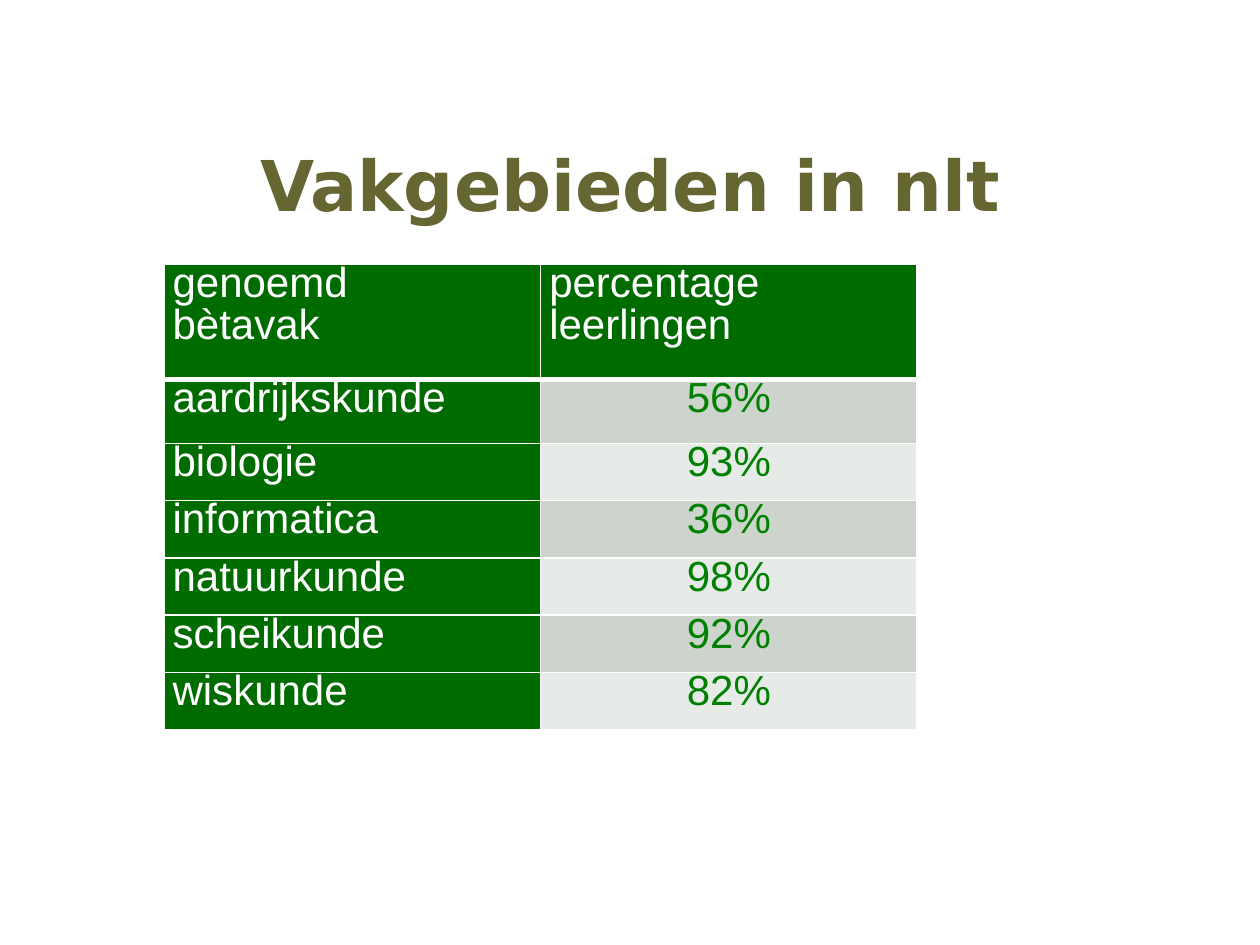
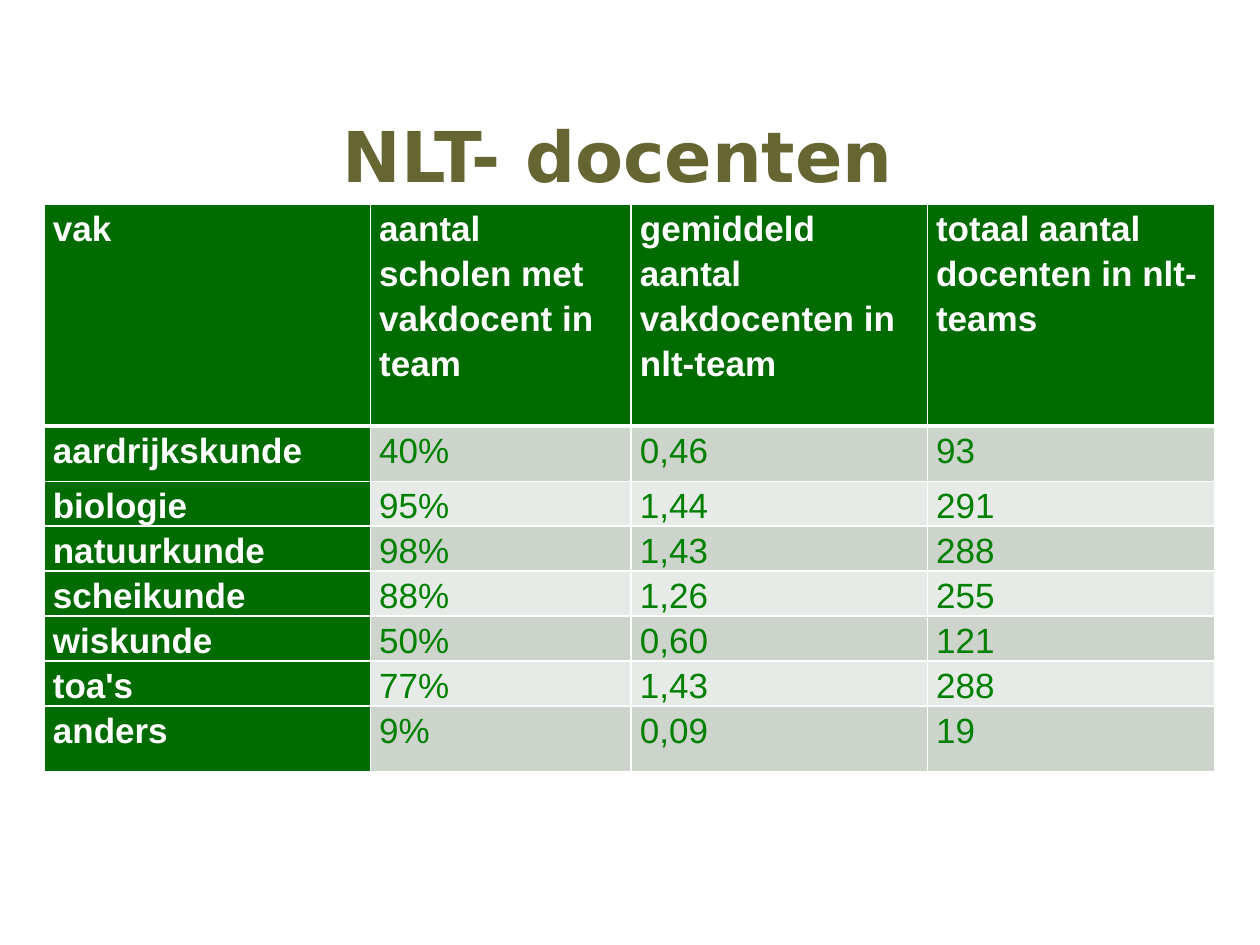
from lxml.etree import SubElement
from pptx import Presentation
from pptx.dml.color import RGBColor
from pptx.enum.text import MSO_ANCHOR as Anchor, PP_ALIGN as Align
from pptx.oxml.ns import qn
from pptx.util import Inches, Pt

COLUMNS, ROWS = 100, 75
WHITE, OLIVE, DARK_GREEN, GREEN = "FFFFFF", "666633", "006C00", "008000"
BANDS = ("CCD4CC", "E7EBE7")


def color(value):
    return RGBColor.from_string(value)


class Deck:
    def __init__(self):
        self.presentation = Presentation()
        self.presentation.slide_width = Inches(10)
        self.presentation.slide_height = Inches(7.5)
        self.slide = None

    def x(self, columns):
        return round(self.presentation.slide_width * columns / COLUMNS)

    def y(self, rows):
        return round(self.presentation.slide_height * rows / ROWS)

    def style(self, paragraph, font_name, size, font_color, bold, align):
        paragraph.alignment = align
        font = paragraph.font
        font.name, font.size, font.bold = font_name, Pt(size), bold
        font.color.rgb = color(font_color)

    def add_slide(self, title, top):
        layout = self.presentation.slide_layouts[5]
        self.slide = self.presentation.slides.add_slide(layout)
        shape = self.slide.shapes.title
        shape.left, shape.top = 0, self.y(top)
        shape.width, shape.height = self.x(COLUMNS), self.y(12.5)
        frame = shape.text_frame
        frame.text = title
        frame.vertical_anchor = Anchor.MIDDLE
        self.style(frame.paragraphs[0], "DejaVu Sans", 40, OLIVE, True, Align.CENTER)

    def add_borders(self, cell, header, below_header):
        properties = cell._tc.get_or_add_tcPr()
        widths = {"L": 1, "R": 1, "T": 3 if below_header else 1, "B": 3 if header else 1}
        for side, width in widths.items():
            line = SubElement(properties, qn(f"a:ln{side}"), w=str(Pt(width)))
            fill = SubElement(line, qn("a:solidFill"))
            SubElement(fill, qn("a:srgbClr"), val=WHITE)

    def fill_cell(self, cell, text, row, column, size, spacing, bold_labels, value_align):
        label = row == 0 or column == 0
        self.add_borders(cell, row == 0, row == 1)
        cell.fill.solid()
        cell.fill.fore_color.rgb = color(DARK_GREEN if label else BANDS[(row - 1) % 2])
        cell.margin_left = cell.margin_right = self.x(0.7)
        cell.margin_top = cell.margin_bottom = 0
        cell.text = text
        for paragraph in cell.text_frame.paragraphs:
            paragraph.line_spacing = spacing
            self.style(paragraph, "Arial", size, WHITE if label else GREEN,
                       label and bold_labels, Align.LEFT if label else value_align)

    def add_table(self, left, top, widths, heights, records, **text_style):
        shape = self.slide.shapes.add_table(
            len(heights), len(widths), self.x(left), self.y(top),
            self.x(sum(widths)), self.y(sum(heights)))
        table = shape.table
        for column, width in zip(table.columns, widths):
            column.width = self.x(width)
        for row, height in zip(table.rows, heights):
            row.height = self.y(height)
        for row, record in enumerate(records):
            for column, text in enumerate(record):
                self.fill_cell(table.cell(row, column), text, row, column, **text_style)


SUBJECT_SHARES = [
    ("genoemd\nbètavak", "percentage\nleerlingen"),
    ("aardrijkskunde", "56%"),
    ("biologie", "93%"),
    ("informatica", "36%"),
    ("natuurkunde", "98%"),
    ("scheikunde", "92%"),
    ("wiskunde", "82%"),
]

TEACHERS = [
    ("vak", "aantal scholen met vakdocent in team",
     "gemiddeld aantal vakdocenten in nlt-team", "totaal aantal docenten in nlt-teams"),
    ("aardrijkskunde", "40%", "0,46", "93"),
    ("biologie", "95%", "1,44", "291"),
    ("natuurkunde", "98%", "1,43", "288"),
    ("scheikunde", "88%", "1,26", "255"),
    ("wiskunde", "50%", "0,60", "121"),
    ("toa's", "77%", "1,43", "288"),
    ("anders", "9%", "0,09", "19"),
]


def main():
    deck = Deck()
    deck.add_slide("Vakgebieden in nlt", 8.3)
    deck.add_table(13, 21, [29.9] * 2, [9.1, 5.1] + [4.54] * 5, SUBJECT_SHARES,
                   size=24, spacing=Pt(24), bold_labels=False, value_align=Align.CENTER)
    deck.add_slide("NLT- docenten ", 6)
    deck.add_table(3.5, 16.2, [25.9, 20.7, 23.5, 22.8], [17.6, 4.4] + [3.5] * 5 + [5.2],
                   TEACHERS, size=20, spacing=1.15, bold_labels=True, value_align=Align.LEFT)
    deck.presentation.save("out.pptx")


if __name__ == "__main__":
    main()
